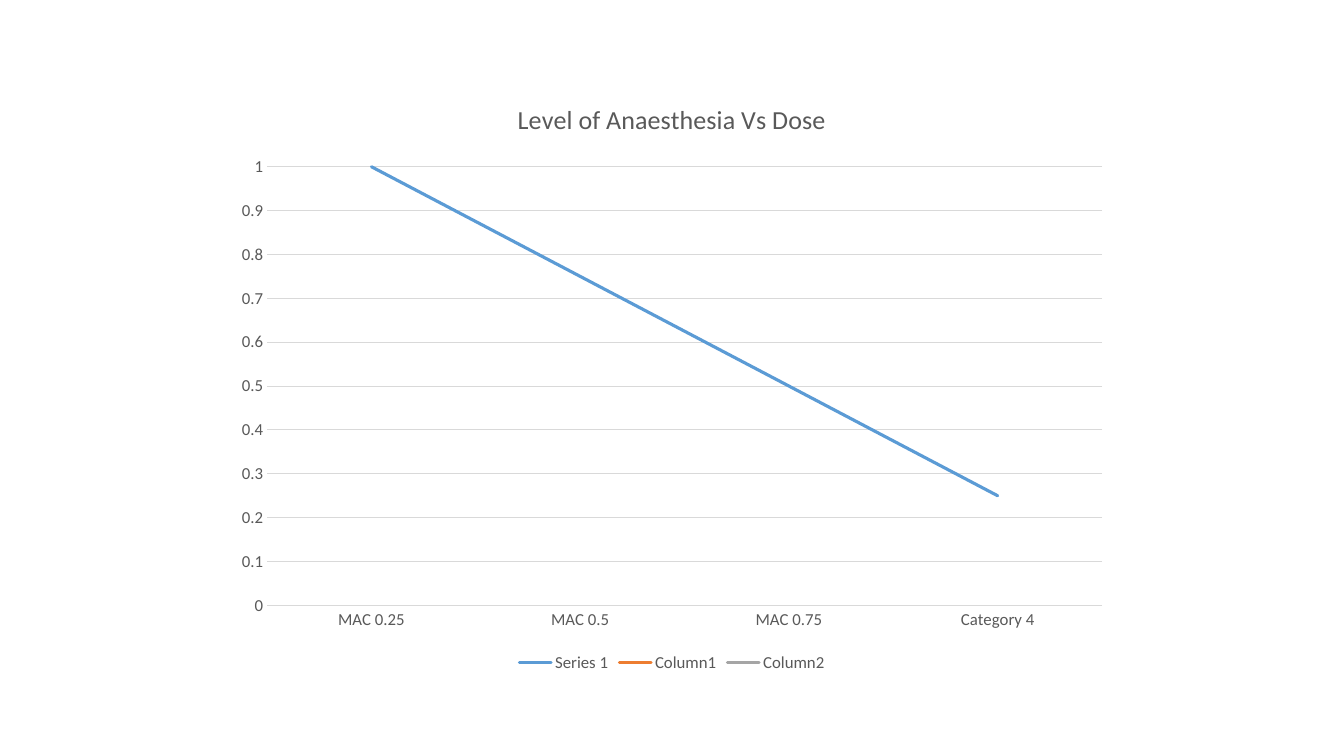
from dataclasses import dataclass
from typing import Any, Optional

from pptx import Presentation
from pptx.chart.data import CategoryChartData
from pptx.dml.color import RGBColor
from pptx.dml.line import LineFormat
from pptx.enum.chart import XL_CHART_TYPE as ChartType
from pptx.enum.chart import XL_LEGEND_POSITION as LegendPosition
from pptx.enum.chart import XL_MARKER_STYLE as MarkerStyle
from pptx.enum.chart import XL_TICK_MARK as TickMark
from pptx.util import Pt


@dataclass(frozen=True)
class Theme:
    font: str = "Calibri"
    text: RGBColor = RGBColor(0x59, 0x59, 0x59)
    grid: RGBColor = RGBColor(0xD9, 0xD9, 0xD9)
    blue: RGBColor = RGBColor(0x5B, 0x9B, 0xD5)
    orange: RGBColor = RGBColor(0xED, 0x7D, 0x31)
    gray: RGBColor = RGBColor(0xA5, 0xA5, 0xA5)
    title_size: float = 18.6
    label_size: float = 12
    grid_width: float = 0.75
    series_width: float = 2.25


@dataclass(frozen=True)
class DoseSeries:
    name: str
    values: tuple[Optional[float], ...]
    color: RGBColor


THEME = Theme()
TITLE = "Level of Anaesthesia Vs Dose"
DOSES = ("MAC 0.25", "MAC 0.5", "MAC 0.75", "Category 4")
EMPTY = (None,) * len(DOSES)
SERIES = (
    DoseSeries("Series 1", (1, 0.75, 0.5, 0.25), THEME.blue),
    DoseSeries("Column1", EMPTY, THEME.orange),
    DoseSeries("Column2", EMPTY, THEME.gray),
)


def set_format(target: Any, values: dict[str, Any]) -> None:
    for name, value in values.items():
        setattr(target, name, value)


def style_font(font: Any, size: float) -> None:
    set_format(font, {"name": THEME.font, "size": Pt(size), "bold": False})
    font.color.rgb = THEME.text


def style_line(line: LineFormat, color: RGBColor, width: float) -> None:
    line.color.rgb = color
    line.width = Pt(width)


def style_axes(chart: Any) -> None:
    for axis in (chart.category_axis, chart.value_axis):
        set_format(axis, {"major_tick_mark": TickMark.NONE,
                          "minor_tick_mark": TickMark.NONE})
        style_font(axis.tick_labels.font, THEME.label_size)
    style_line(chart.category_axis.format.line, THEME.grid, THEME.grid_width)
    set_format(chart.value_axis, {"minimum_scale": 0, "maximum_scale": 1,
                                  "major_unit": 0.1, "has_major_gridlines": True})
    chart.value_axis.format.line.fill.background()
    style_line(chart.value_axis.major_gridlines.format.line,
               THEME.grid, THEME.grid_width)


def style_series(chart: Any) -> None:
    for plotted, series in zip(chart.plots[0].series, SERIES):
        plotted.smooth = False
        plotted.marker.style = MarkerStyle.NONE
        line = plotted.format.line
        style_line(line, series.color, THEME.series_width)
        line.fill.solid()
        line.fill.fore_color.rgb = series.color
        plotted.format.line._ln.set("cap", "rnd")


def add_dose_chart(slide: Any) -> None:
    data = CategoryChartData()
    data.categories = DOSES
    for series in SERIES:
        data.add_series(series.name, series.values)
    chart = slide.shapes.add_chart(
        ChartType.LINE, Pt(160), Pt(56.67), Pt(640), Pt(426.67), data).chart
    style_font(chart.font, THEME.label_size)
    set_format(chart, {"has_title": True, "has_legend": True})
    chart.plots[0].vary_by_categories = False

    title_frame = chart.chart_title.text_frame
    title_frame.text = TITLE
    style_font(title_frame.paragraphs[0].runs[0].font, THEME.title_size)
    chart.chart_title.include_in_layout = False

    set_format(chart.legend, {"position": LegendPosition.BOTTOM,
                              "include_in_layout": False})
    style_font(chart.legend.font, THEME.label_size)
    style_axes(chart)
    style_series(chart)


def main() -> None:
    presentation = Presentation()
    set_format(presentation, {"slide_width": Pt(960), "slide_height": Pt(540)})
    slide = presentation.slides.add_slide(presentation.slide_layouts[6])
    add_dose_chart(slide)
    presentation.save("out.pptx")


if __name__ == "__main__":
    main()
